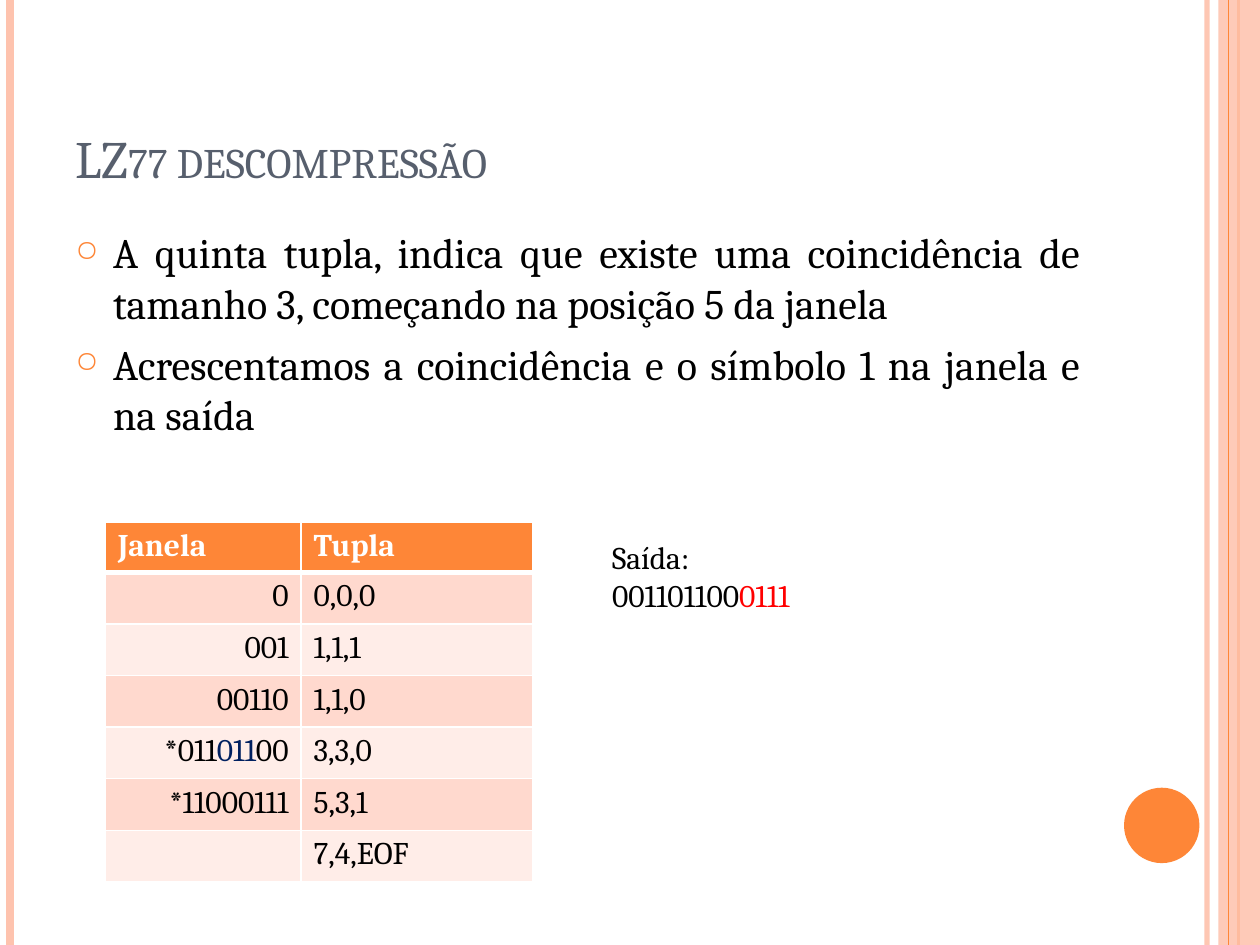
"""Build the LZ77 decompression slide."""
from lxml import etree
from pptx import Presentation
from pptx.dml.color import RGBColor
from pptx.enum.shapes import MSO_CONNECTOR, MSO_SHAPE
from pptx.enum.text import MSO_ANCHOR, PP_ALIGN
from pptx.oxml.ns import qn
from pptx.util import Cm, Pt

LINE = MSO_CONNECTOR.STRAIGHT
RECT, OVAL = MSO_SHAPE.RECTANGLE, MSO_SHAPE.OVAL
TOP, BOTTOM = MSO_ANCHOR.TOP, MSO_ANCHOR.BOTTOM
LEFT, RIGHT, FULL = PP_ALIGN.LEFT, PP_ALIGN.RIGHT, PP_ALIGN.JUSTIFY

THEME = {
    "font": "Cambria", "title": 30, "body": 24, "small": 18,
    "ink": "000000", "slate": "575F6D", "white": "FFFFFF", "navy": "002060",
    "red": "FF0000", "orange": "FE8637", "peach": "FEC3AE",
    "bands": ("FFD9CE", "FFEDE8"),
}
WIDE, HIGH = 25.4, 19.05

TITLE = "LZ77 descompressão"
POINTS = [
    "A quinta tupla, indica que existe uma coincidência de tamanho 3, "
    "começando na posição 5 da janela",
    "Acrescentamos a coincidência e o símbolo 1 na janela e na saída",
]
HEAD = ("Janela", "Tupla")
ROWS = [
    ([("0", "ink")], "0,0,0"),
    ([("001", "ink")], "1,1,1"),
    ([("00110", "ink")], "1,1,0"),
    ([("*011", "ink"), ("011", "navy"), ("00", "ink")], "3,3,0"),
    ([("*11000111", "ink")], "5,3,1"),
    ([], "7,4,EOF"),
]
OUTPUT = [[("Saída:", "ink")], [("001101100", "ink"), ("0111", "red")]]
BACK = [(24.33, "peach", 3, 93), (0.2, "peach", 4.5, 100), (24.97, "orange", 1.5, 100)]
FRONT = [(24.76, "orange", 0.75, 100)]
GRID = {"left": 2.12, "top": 10.52, "cols": (3.95, 4.67), "head": 0.94, "row": 1.04}


def tint(name):
    return RGBColor.from_string(THEME.get(name, name))


def put(item, style):
    for key, value in style.items():
        setattr(item, key, value)


def node(base, tag, **attrs):
    return etree.SubElement(base, qn(tag), **attrs)


def fade(fill, part):
    for color in fill.iter(qn("a:srgbClr")):
        node(color, "a:alpha", val=str(part * 1000))


def stripe(slide, x, color, width, part):
    line = slide.shapes.add_connector(LINE, Cm(x), 0, Cm(x), Cm(HIGH))
    line.line.color.rgb = tint(color)
    line.line.width = Pt(width)
    if part < 100:
        fade(line.line._get_or_add_ln(), part)
    node(line._element.spPr, "a:effectLst")


def solid(slide, kind, box, color, part=100):
    shape = slide.shapes.add_shape(kind, *map(Cm, box))
    shape.shadow.inherit = False
    shape.fill.solid()
    shape.fill.fore_color.rgb = tint(color)
    shape.line.fill.background()
    if part < 100:
        fade(shape._element.spPr, part)


def write(para, runs, size, align=LEFT, bold=False):
    para.alignment = align
    for text, color in runs:
        run = para.add_run()
        run.text = text
        put(run.font, {"name": THEME["font"], "size": Pt(THEME[size]), "bold": bold})
        run.font.color.rgb = tint(color)


def textbox(slide, box, lines, size, align=LEFT, wrap=True, anchor=TOP):
    frame = slide.shapes.add_textbox(*map(Cm, box)).text_frame
    put(frame, {"word_wrap": wrap, "vertical_anchor": anchor})
    for i, runs in enumerate(lines):
        write(frame.add_paragraph() if i else frame.paragraphs[0], runs, size, align)
    return frame.paragraphs


def bullet(para):
    para.space_before = Pt(6)
    props = para._p.get_or_add_pPr()
    props.set("marL", str(Cm(0.76)))
    props.set("indent", str(Cm(-0.76)))
    node(node(props, "a:buClr"), "a:srgbClr", val=THEME["orange"])
    node(props, "a:buSzPct", val="70000")
    node(props, "a:buChar", char="○")


def paint(cell, color, base):
    props = cell._tc.get_or_add_tcPr()
    for side, width in (("L", 1), ("R", 1), ("T", 1), ("B", base)):
        edge = node(props, "a:ln" + side, w=str(Pt(width)))
        node(node(edge, "a:solidFill"), "a:srgbClr", val=THEME["white"])
    cell.fill.solid()
    cell.fill.fore_color.rgb = tint(color)


def table(slide):
    high = GRID["head"] + GRID["row"] * len(ROWS)
    box = GRID["left"], GRID["top"], sum(GRID["cols"]), high
    grid = slide.shapes.add_table(len(ROWS) + 1, len(HEAD), *map(Cm, box)).table
    for col, width in zip(grid.columns, GRID["cols"]):
        col.width = Cm(width)
    lines = [[[(text, "white")] for text in HEAD]]
    lines += [[runs, [(text, "ink")]] for runs, text in ROWS]
    for r, line in enumerate(lines):
        grid.rows[r].height = Cm(GRID["row"] if r else GRID["head"])
        fill = THEME["bands"][(r - 1) % 2] if r else "orange"
        for c, runs in enumerate(line):
            cell = grid.cell(r, c)
            align = RIGHT if r and c == 0 else LEFT
            write(cell.text_frame.paragraphs[0], runs, "small", align, r == 0)
            paint(cell, fill, 1 if r else 3)


def main():
    deck = Presentation()
    put(deck, {"slide_width": Cm(WIDE), "slide_height": Cm(HIGH)})
    slide = deck.slides.add_slide(deck.slide_layouts[6])
    for band in BACK:
        stripe(slide, *band)
    solid(slide, RECT, (24.56, 0, 0.84, HIGH), "peach", 87)
    for band in FRONT:
        stripe(slide, *band)
    solid(slide, OVAL, (22.66, 15.88, 1.52, 1.52), "orange")
    title = textbox(slide, (1.27, 0.76, 20.75, 3.18), [[(TITLE, "slate")]],
                    "title", anchor=BOTTOM)
    title[0].runs[0]._r.get_or_add_rPr().set("cap", "small")
    points = [[(text, "ink")] for text in POINTS]
    for para in textbox(slide, (1.27, 4.45, 20.75, 13.54), points, "body", FULL):
        bullet(para)
    table(slide)
    textbox(slide, (12.09, 10.72, 5.16, 1.8), OUTPUT, "small", wrap=False)
    deck.save("out.pptx")


if __name__ == "__main__":
    main()
